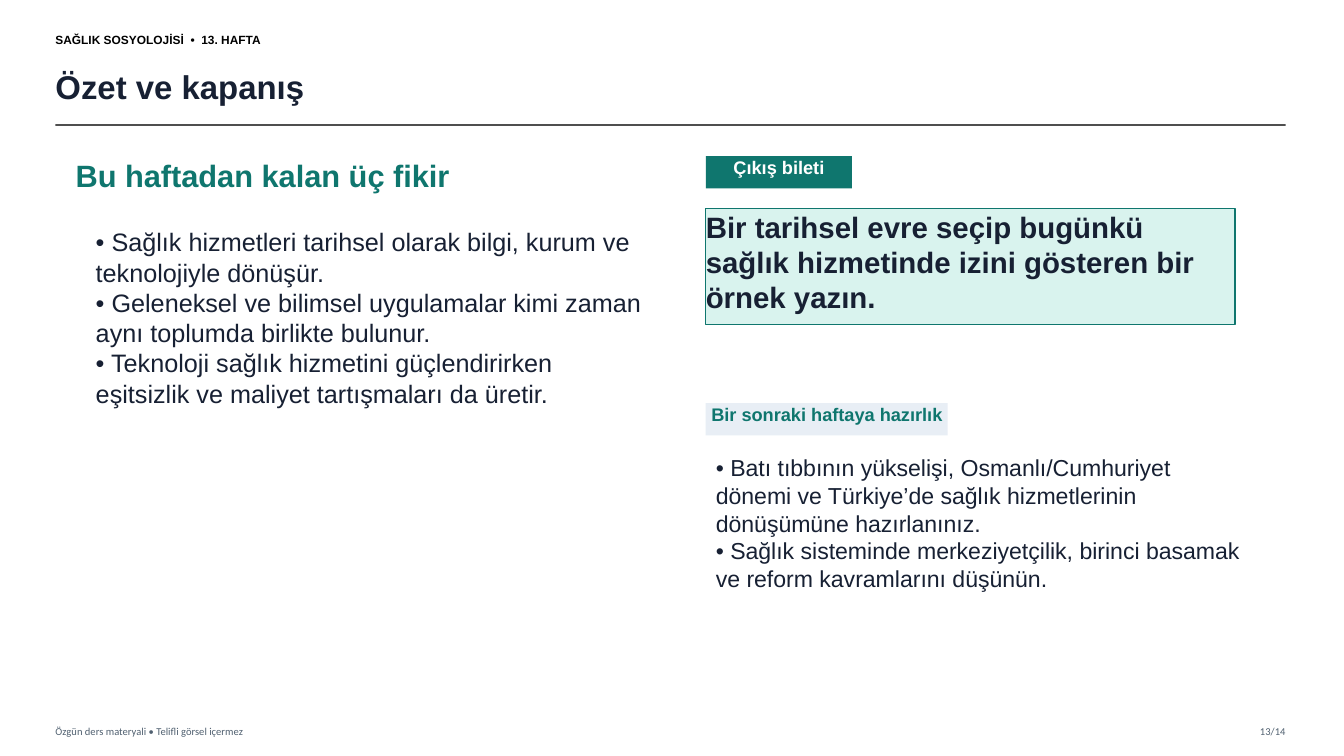
from dataclasses import dataclass

from lxml.etree import SubElement
from pptx import Presentation
from pptx.dml.color import RGBColor
from pptx.enum.shapes import MSO_CONNECTOR, MSO_SHAPE
from pptx.enum.text import MSO_ANCHOR, MSO_AUTO_SIZE, PP_ALIGN
from pptx.oxml.ns import qn
from pptx.shapes.base import BaseShape
from pptx.slide import Slide
from pptx.util import Inches, Pt

COLUMN = Inches(0.05)
ROW = Inches(0.01)
LEFT_EDGE, RIGHT_EDGE = 11, 255
PROMPT_COLUMN = 140
FOOTER_ROW, FOOTER_ROWS = 714, 22


@dataclass(frozen=True)
class Theme:
    ink: str = "172033"
    accent: str = "0F766E"
    accent_tint: str = "D9F3EE"
    label_tint: str = "E8EEF5"
    white: str = "FFFFFF"
    black: str = "000000"
    rule: str = "333333"
    muted: str = "506070"
    font: str = "Arial"
    footer_font: str = "Calibri"
    course_size: float = 8.5
    title_size: float = 23.5
    heading_size: float = 22
    idea_size: float = 18
    prompt_size: float = 21
    label_size: float = 13
    preparation_size: float = 16.5
    footer_size: float = 7.5


THEME = Theme()


@dataclass(frozen=True)
class Area:
    """Place on the grid, counted in columns and rows."""
    column: int
    row: int
    columns: int
    rows: int

    def lengths(self) -> tuple[int, int, int, int]:
        return (self.column * COLUMN, self.row * ROW,
                self.columns * COLUMN, self.rows * ROW)


@dataclass(frozen=True)
class Block:
    area: Area
    lines: tuple[str, ...]
    size: float
    color: str = THEME.ink
    bold: bool = False
    font: str = THEME.font
    align: PP_ALIGN = PP_ALIGN.LEFT
    anchor: MSO_ANCHOR = MSO_ANCHOR.TOP
    fill: str | None = None
    outline: str | None = None


TITLE = Block(Area(LEFT_EDGE, 58, 239, 55), ("Özet ve kapanış",),
              THEME.title_size, bold=True, anchor=MSO_ANCHOR.MIDDLE)

BLOCKS = (
    Block(Area(LEFT_EDGE, 25, 72, 28), ("SAĞLIK SOSYOLOJİSİ  •  13. HAFTA",),
          THEME.course_size, THEME.black, bold=True, anchor=MSO_ANCHOR.MIDDLE),
    Block(Area(LEFT_EDGE, FOOTER_ROW, 120, FOOTER_ROWS),
          ("Özgün ders materyali • Telifli görsel içermez",),
          THEME.footer_size, THEME.muted, font=THEME.footer_font,
          anchor=MSO_ANCHOR.MIDDLE),
    Block(Area(RIGHT_EDGE - 13, FOOTER_ROW, 13, FOOTER_ROWS), ("13/14",),
          THEME.footer_size, THEME.muted, font=THEME.footer_font,
          align=PP_ALIGN.RIGHT, anchor=MSO_ANCHOR.MIDDLE),
    Block(Area(15, 155, 108, 45), ("Bu haftadan kalan üç fikir",),
          THEME.heading_size, THEME.accent, bold=True),
    Block(Area(19, 225, 110, 240), (
        "• Sağlık hizmetleri tarihsel olarak bilgi, kurum ve teknolojiyle dönüşür.",
        "• Geleneksel ve bilimsel uygulamalar kimi zaman aynı toplumda birlikte bulunur.",
        "• Teknoloji sağlık hizmetini güçlendirirken eşitsizlik ve maliyet "
        "tartışmaları da üretir.",
    ), THEME.idea_size),
    Block(Area(PROMPT_COLUMN, 155, 29, 32), ("Çıkış bileti",),
          THEME.label_size, THEME.white, bold=True, align=PP_ALIGN.CENTER,
          fill=THEME.accent),
    Block(Area(PROMPT_COLUMN, 207, 105, 115),
          ("Bir tarihsel evre seçip bugünkü sağlık hizmetinde izini gösteren "
           "bir örnek yazın.",),
          THEME.prompt_size, bold=True, fill=THEME.accent_tint,
          outline=THEME.accent),
    Block(Area(PROMPT_COLUMN, 400, 48, 32), ("Bir sonraki haftaya hazırlık",),
          THEME.label_size, THEME.accent, bold=True, align=PP_ALIGN.CENTER,
          fill=THEME.label_tint),
    Block(Area(PROMPT_COLUMN + 2, 450, 104, 135), (
        "• Batı tıbbının yükselişi, Osmanlı/Cumhuriyet dönemi ve Türkiye’de "
        "sağlık hizmetlerinin dönüşümüne hazırlanınız.",
        "• Sağlık sisteminde merkeziyetçilik, birinci basamak ve reform "
        "kavramlarını düşünün.",
    ), THEME.preparation_size),
)


def write_text(box: BaseShape, block: Block) -> None:
    frame = box.text_frame
    frame.word_wrap = True
    frame.auto_size = MSO_AUTO_SIZE.NONE
    frame.vertical_anchor = block.anchor
    frame.margin_left = frame.margin_right = 0
    frame.margin_top = frame.margin_bottom = 0
    frame.text = "\n".join(block.lines)
    for para in frame.paragraphs:
        para.alignment = block.align
        para.font.name = block.font
        para.font.size = Pt(block.size)
        para.font.bold = block.bold
        para.font.color.rgb = RGBColor.from_string(block.color)


def add_block(page: Slide, block: Block) -> None:
    """Add a filled rectangle if the block has a fill, else a text box."""
    if block.fill is None:
        box = page.shapes.add_textbox(*block.area.lengths())
    else:
        box = page.shapes.add_shape(MSO_SHAPE.RECTANGLE, *block.area.lengths())
        box.shadow.inherit = False
        box.fill.solid()
        box.fill.fore_color.rgb = RGBColor.from_string(block.fill)
        if block.outline is None:
            box.line.fill.background()
        else:
            box.line.color.rgb = RGBColor.from_string(block.outline)
            box.line.width = Pt(1)
    write_text(box, block)


def place_title(page: Slide) -> None:
    title = page.shapes.title
    title.left, title.top, title.width, title.height = TITLE.area.lengths()
    write_text(title, TITLE)


def add_title_rule(page: Slide) -> None:
    """Draw the slightly transparent line under the title."""
    row = 124 * ROW
    rule = page.shapes.add_connector(
        MSO_CONNECTOR.STRAIGHT, LEFT_EDGE * COLUMN, row, RIGHT_EDGE * COLUMN, row)
    rule.line.color.rgb = RGBColor.from_string(THEME.rule)
    rule.line.width = Pt(1.2)
    properties = rule._element.spPr
    color = properties.find(".//" + qn("a:srgbClr"))
    SubElement(color, qn("a:alpha"), val="85000")
    SubElement(properties, qn("a:effectLst"))


def main() -> None:
    deck = Presentation()
    deck.slide_width, deck.slide_height = Inches(13.33), Inches(7.5)
    page = deck.slides.add_slide(deck.slide_layouts.get_by_name("Title Only"))
    place_title(page)
    add_title_rule(page)
    for block in BLOCKS:
        add_block(page, block)
    deck.save("out.pptx")


if __name__ == "__main__":
    main()
